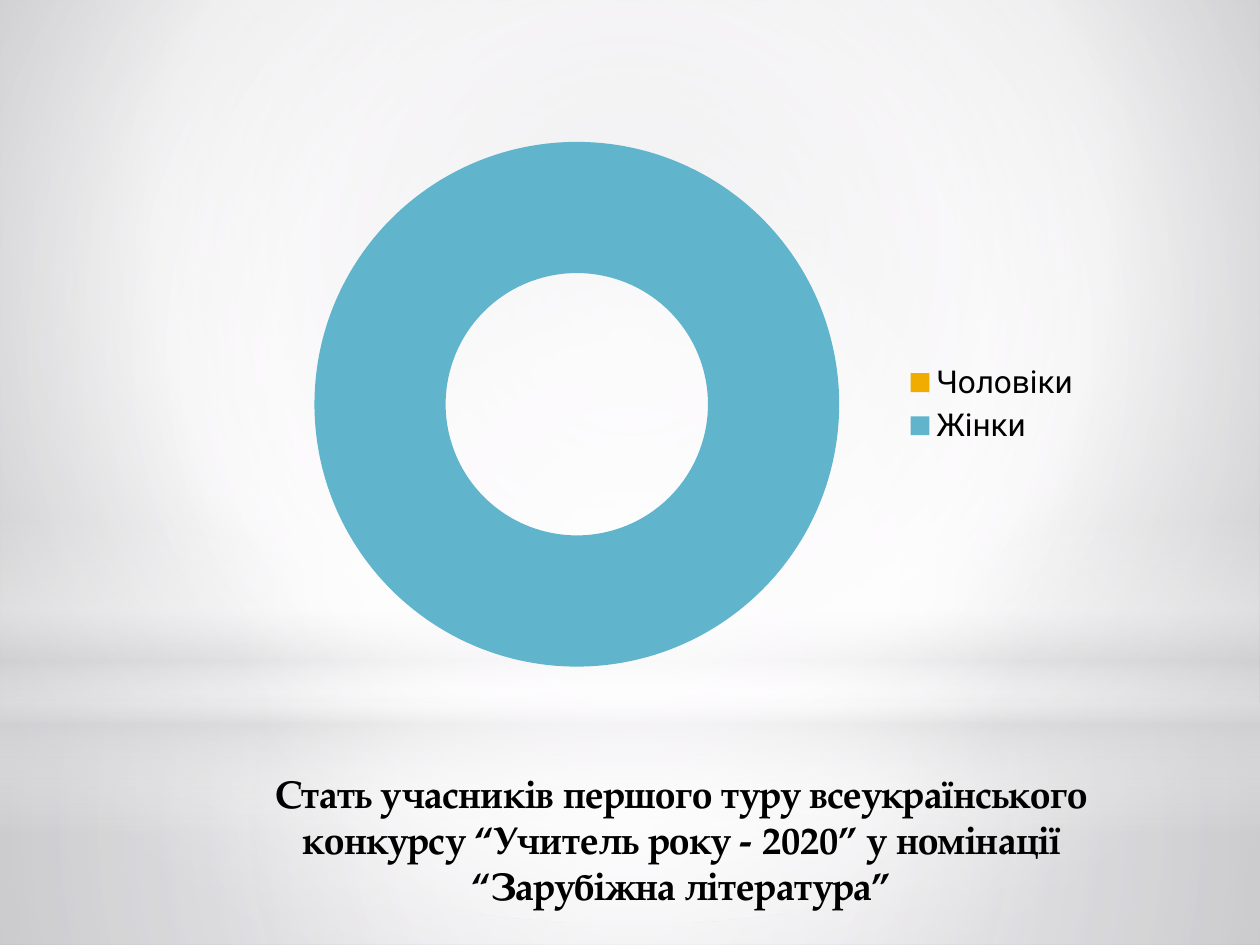
from lxml import etree
from pptx import Presentation
from pptx import util as u
from pptx.chart.data import CategoryChartData
from pptx.dml.color import RGBColor
from pptx.enum import chart as charts
from pptx.enum import shapes, text
from pptx.oxml.ns import qn

BLACK = RGBColor(0x00, 0x00, 0x00)
WHITE = RGBColor(0xFF, 0xFF, 0xFF)
SOFT_WHITE = RGBColor(0xFF, 0xFE, 0xFF)
PALE_GREY = RGBColor(0xD4, 0xD4, 0xD6)
LIGHT_GREY = RGBColor(0xCB, 0xCB, 0xCE)
MID_GREY = RGBColor(0xA9, 0xA9, 0xAE)
AMBER = RGBColor(0xF0, 0xAD, 0x00)
BLUE = RGBColor(0x60, 0xB5, 0xCC)

TITLE_FONT = "TeX Gyre Pagella"
CHART_FONT = "Roboto"
TITLE = (
    "Стать учасників першого туру всеукраїнського конкурсу "
    "“Учитель року - 2020” у номінації “Зарубіжна література”"
)
WIDTH, HEIGHT = 25.4, 19.05
HORIZON = 14.17
CENTRE = (50, 50, 50, 50)


def set_gradient(fill, owner, stops, focus=None):
    fill.gradient()
    gradient = next(owner.iter(qn("a:gradFill")))
    for child in list(gradient):
        gradient.remove(child)
    stop_list = etree.SubElement(gradient, qn("a:gsLst"))
    for position, color, opacity in stops:
        stop = etree.SubElement(stop_list, qn("a:gs"), pos=str(position * 1000))
        tint = etree.SubElement(stop, qn("a:srgbClr"), val=str(color))
        if opacity < 100:
            etree.SubElement(tint, qn("a:alpha"), val=str(opacity * 1000))
    if focus:
        route = etree.SubElement(gradient, qn("a:path"), path="circle")
        edges = {side: str(value * 1000) for side, value in zip("ltrb", focus)}
        etree.SubElement(route, qn("a:fillToRect"), **edges)
    else:
        etree.SubElement(gradient, qn("a:lin"), ang="5400000", scaled="0")


def add_glow(page, kind, top, height, stops, focus=None):
    shape = page.shapes.add_shape(kind, 0, u.Cm(top), u.Cm(WIDTH), u.Cm(height))
    shape.shadow.inherit = False
    shape.line.fill.background()
    set_gradient(shape.fill, shape.element.spPr, stops, focus)


def add_backdrop(page):
    set_gradient(
        page.background.fill,
        page.element,
        [(0, LIGHT_GREY, 100), (60, WHITE, 100), (100, MID_GREY, 100)],
        (20, 10, 20, 60),
    )
    rectangle = shapes.MSO_SHAPE.RECTANGLE
    floor = [(0, SOFT_WHITE, 91), (37, SOFT_WHITE, 76), (100, PALE_GREY, 79)]
    wall = [(0, SOFT_WHITE, 89), (48, SOFT_WHITE, 62), (100, PALE_GREY, 79)]
    band = [
        (0, SOFT_WHITE, 0),
        (29, SOFT_WHITE, 30),
        (45, PALE_GREY, 40),
        (55, SOFT_WHITE, 26),
        (65, PALE_GREY, 60),
        (100, SOFT_WHITE, 0),
    ]
    halo = [(0, SOFT_WHITE, 100), (56, SOFT_WHITE, 0)]
    add_glow(page, rectangle, HORIZON, HEIGHT - HORIZON, floor, CENTRE)
    add_glow(page, rectangle, 0, HORIZON, wall, CENTRE)
    add_glow(page, rectangle, 10.46, 6.35, band)
    add_glow(page, shapes.MSO_SHAPE.OVAL, 4.45, HORIZON, halo, CENTRE)


def place_title(page):
    box = page.shapes.title
    box.left, box.top = u.Cm(4.7), u.Cm(15.32)
    box.width, box.height = u.Cm(18.08), u.Cm(3.18)
    frame = box.text_frame
    frame.text = TITLE
    frame.word_wrap = True
    frame.vertical_anchor = text.MSO_ANCHOR.MIDDLE
    para = frame.paragraphs[0]
    para.alignment = text.PP_ALIGN.CENTER
    para.font.name = TITLE_FONT
    para.font.size = u.Pt(22)
    para.font.bold = True
    para.font.color.rgb = BLACK
    page.shapes.element.append(box.element)


def add_gender_chart(page):
    data = CategoryChartData()
    data.categories = ["Чоловіки", "Жінки"]
    data.add_series("Series 1", (0, 100))
    chart = page.shapes.add_chart(
        charts.XL_CHART_TYPE.DOUGHNUT,
        u.Cm(5.11), u.Cm(2.51), u.Cm(16.94), u.Cm(11.28),
        data,
    ).chart
    chart.has_title = False
    chart.font.name = CHART_FONT
    chart.font.size = u.Pt(18)
    chart.font.color.rgb = BLACK
    chart.has_legend = True
    chart.legend.position = charts.XL_LEGEND_POSITION.RIGHT
    chart.legend.include_in_layout = False
    plot = chart.plots[0]
    plot.vary_by_categories = True
    for index, color in enumerate((AMBER, BLUE)):
        point = plot.series[0].points[index]
        point.format.fill.solid()
        point.format.fill.fore_color.rgb = color
        point.format.line.fill.background()


def main():
    deck = Presentation()
    deck.slide_width, deck.slide_height = u.Cm(WIDTH), u.Cm(HEIGHT)
    page = deck.slides.add_slide(deck.slide_layouts[5])
    add_backdrop(page)
    place_title(page)
    add_gender_chart(page)
    deck.save("out.pptx")


if __name__ == "__main__":
    main()
